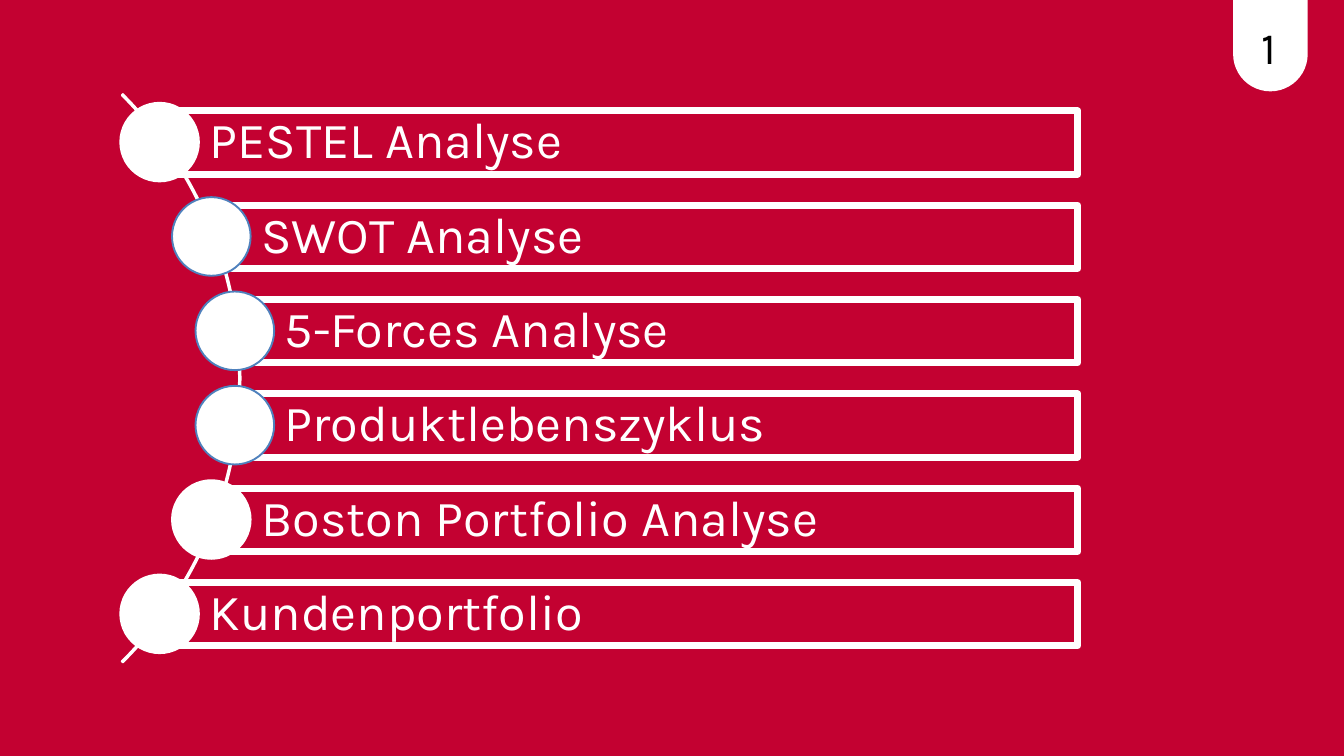
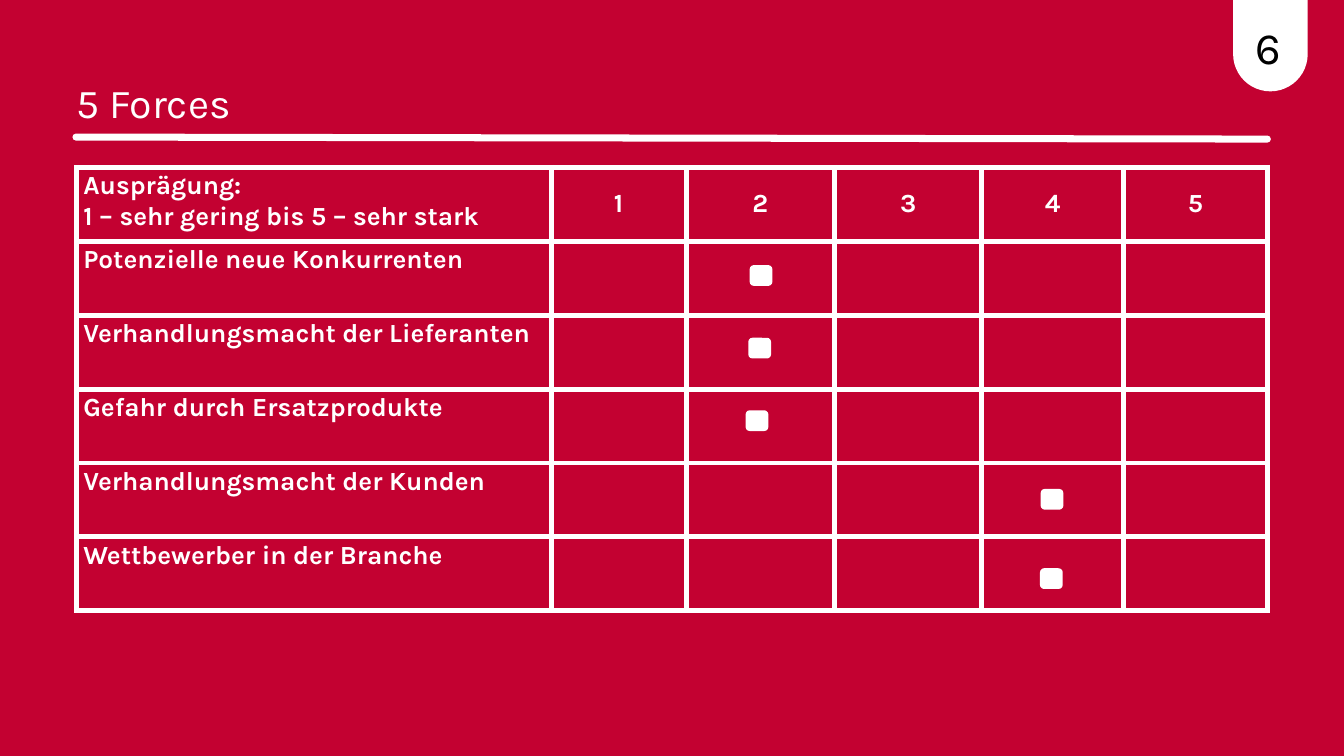
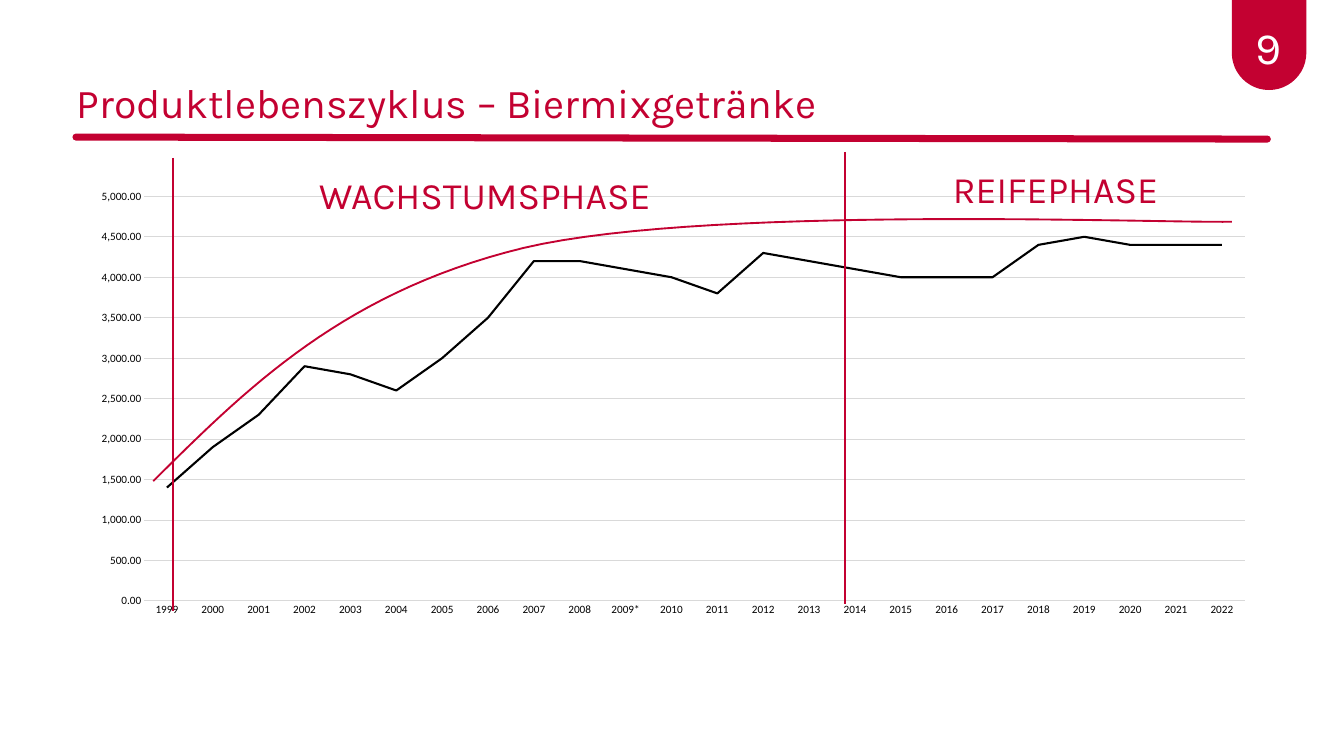
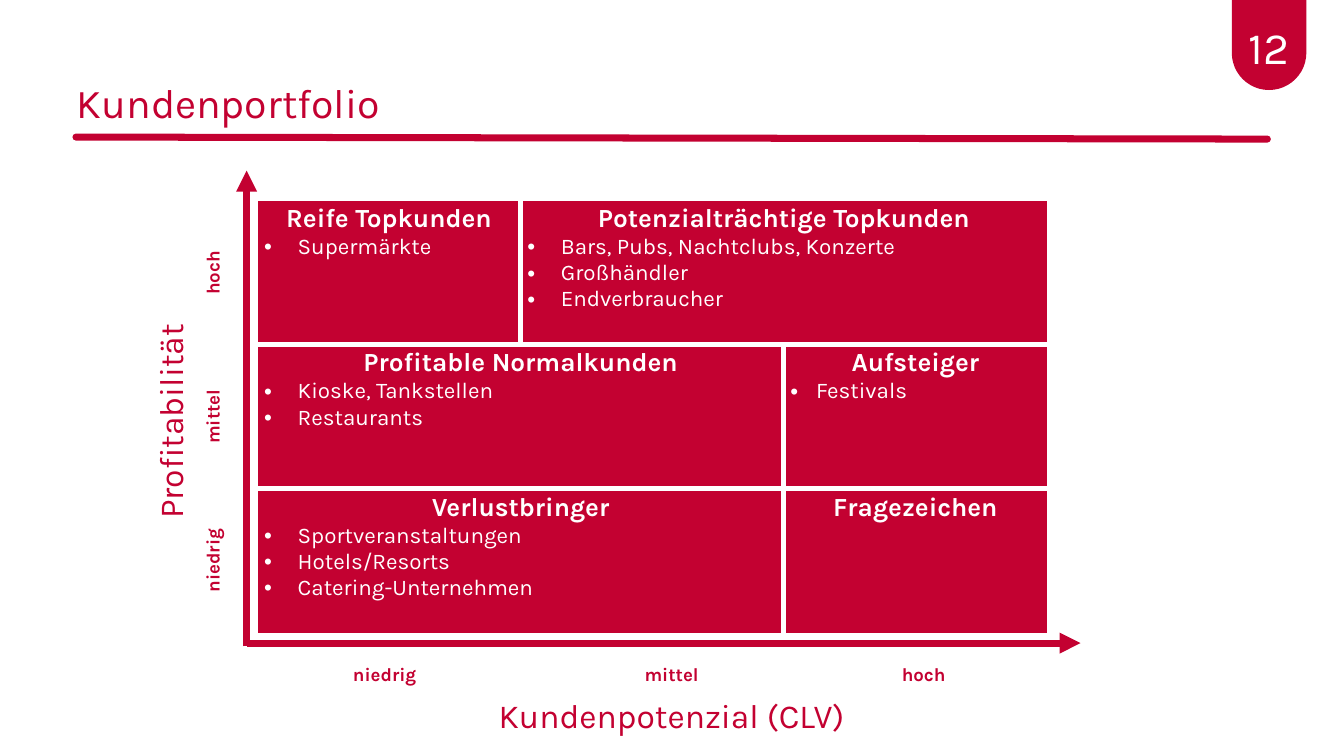
"""Build four slides on strategic analysis tools for a drinks producer."""
from lxml import etree
from pptx import Presentation
from pptx import util as u
from pptx.chart.data import CategoryChartData
from pptx.dml.color import RGBColor
from pptx.enum import chart as charts
from pptx.enum import shapes, text
from pptx.oxml import parse_xml
from pptx.oxml.ns import nsdecls, qn

RED = RGBColor(0xC3, 0x01, 0x31)
WHITE = RGBColor(0xFF, 0xFF, 0xFF)
BLACK = RGBColor(0, 0, 0)
BLUE = RGBColor(0x4F, 0x81, 0xBD)
GREY = RGBColor(0xD9, 0xD9, 0xD9)
FONT = "Karla"
COLUMNS, ROWS = 20, 11.25
CELL = u.Inches(1)
LEFT, CENTER = text.PP_ALIGN.LEFT, text.PP_ALIGN.CENTER
TITLE_SPACING = u.Pt(61.5)

TOOLS = ["PESTEL Analyse", "SWOT Analyse", "5-Forces Analyse",
         "Produktlebenszyklus", "Boston Portfolio Analyse", "Kundenportfolio"]
BAR_LEFTS = [2.38, 3.15, 3.5, 3.5, 3.15, 2.38]
DOT_LINES = [WHITE, BLUE, BLUE, BLUE, WHITE, WHITE]

FORCES = ["Potenzielle neue\u00a0Konkurrenten", "Verhandlungsmacht der Lieferanten",
          "Gefahr durch Ersatzprodukte", "Verhandlungsmacht der Kunden",
          "Wettbewerber in der\u00a0Branche"]
RATINGS = [(11.17, 3.96), (11.15, 5.04), (11.11, 6.12), (15.5, 7.29), (15.49, 8.47)]

YEARS = [f"{year}*" if year == 2009 else str(year) for year in range(1999, 2023)]
SALES = [1400, 1900, 2300, 2900, 2800, 2600, 3000, 3500, 4200, 4200, 4100, 4000,
         3800, 4300, 4200, 4100, 4000, 4000, 4000, 4400, 4500, 4400, 4400, 4400]
LIFE_CURVE = [[(2.28, 7.16), (3.7, 5.75), (5.12, 4.34), (7.79, 3.69)],
              [(7.79, 3.69), (10.47, 3.05), (17.18, 3.32), (18.33, 3.3)]]

SEGMENTS = [
    (0, 0, 0, "Reife Topkunden", ["Supermärkte"], 0.5),
    (0, 1, 2, "Potenzialträchtige Topkunden",
     ["Bars, Pubs, Nachtclubs, Konzerte", "Großhändler", "Endverbraucher"], 0.5),
    (1, 0, 1, "Profitable Normalkunden", ["Kioske, Tankstellen", "Restaurants"], 0.5),
    (1, 2, 2, "Aufsteiger", ["Festivals"], 0.38),
    (2, 0, 1, "Verlustbringer",
     ["Sportveranstaltungen", "Hotels/Resorts", "Catering-Unternehmen"], 0.5),
    (2, 2, 2, "Fragezeichen", [], 0.5),
]
LEVELS = [("niedrig", 4.81), ("mittel", 9.08), ("hoch", 12.83)]


def grid(*lengths):
    """Turn columns and rows of the slide grid into lengths."""
    return [round(length * CELL) for length in lengths]


def apply(target, values):
    """Set attributes of an object from a dict."""
    for name, value in values.items():
        setattr(target, name, value)


def write(paragraph, words, size, color, bold=False, align=LEFT, spacing=None):
    """Fill a paragraph with one formatted run."""
    apply(paragraph, {"alignment": align, "line_spacing": spacing})
    run = paragraph.add_run()
    run.text = words
    apply(run.font, {"name": FONT, "size": u.Pt(size), "bold": bold})
    run.font.color.rgb = color


def set_margins(frame, left=0, top=0, right=0, bottom=0):
    """Set the inner margins of a text frame."""
    apply(frame, dict(zip(("margin_left", "margin_top", "margin_right", "margin_bottom"),
                          grid(left, top, right, bottom))))


def add_text(slide, place, words, size, color, flush=False, vertical=False, **form):
    """Add a wrapped text box, optionally without margins or turned upwards."""
    frame = slide.shapes.add_textbox(*grid(*place)).text_frame
    frame.word_wrap = True
    if flush:
        set_margins(frame)
    if vertical:
        frame._txBody.bodyPr.set("vert", "vert270")
    write(frame.paragraphs[0], words, size, color, **form)


def paint(shape, fill=None, line=None, width=2):
    """Give a shape its fill and line and remove its shadow."""
    shape.shadow.inherit = False
    for target, color in ((shape.fill, fill), (shape.line.fill, line)):
        if color is None:
            target.background()
        else:
            target.solid()
            target.fore_color.rgb = color
    if line is not None:
        shape.line.width = u.Pt(width)


def add_shape(slide, kind, place, **colors):
    """Add a painted preset shape."""
    shape = slide.shapes.add_shape(kind, *grid(*place))
    paint(shape, **colors)
    return shape


def add_line(slide, ends, color, width=7.5, arrow=False, rounded=False):
    """Add a straight line, with an arrowhead or round ends if wanted."""
    line = slide.shapes.add_connector(shapes.MSO_CONNECTOR.STRAIGHT, *grid(*ends))
    line.line.color.rgb = color
    line.line.width = u.Pt(width)
    outline = line.line._get_or_add_ln()
    if rounded:
        outline.set("cap", "rnd")
    if arrow:
        etree.SubElement(outline, qn("a:tailEnd"), type="triangle")
    etree.SubElement(line._element.spPr, qn("a:effectLst"))


def add_curve(slide, segments, color, steps=30):
    """Draw joined cubic curves as one open outline."""
    points = []
    for segment in segments:
        for step in range(steps + 1):
            t = step / steps
            weights = ((1 - t) ** 3, 3 * t * (1 - t) ** 2, 3 * t * t * (1 - t), t ** 3)
            points.append(grid(*(sum(w * point[axis] for w, point in zip(weights, segment))
                                 for axis in (0, 1))))
    builder = slide.shapes.build_freeform(*points[0])
    builder.add_line_segments(points[1:], close=False)
    paint(builder.convert_to_shape(), line=color)


def add_slide(presentation, number, dark, title=None):
    """Add a slide with background, page tab and underlined title."""
    slide = presentation.slides.add_slide(presentation.slide_layouts[5 if title else 6])
    ground, ink = (RED, WHITE) if dark else (WHITE, RED)
    slide.background.fill.solid()
    slide.background.fill.fore_color.rgb = ground
    tab_place = (18.35, 0, 1.11, 1.36) if dark else (18.33, -0.02, 1.11, 1.36)
    tab = add_shape(slide, shapes.MSO_SHAPE.ROUND_2_SAME_RECTANGLE, tab_place, fill=ink)
    tab.adjustments[0], tab.adjustments[1] = 0, 0.5
    add_text(slide, (18.54, 0.16, 0.68, 0.86), str(number), 48, BLACK if dark else WHITE,
             flush=True, align=CENTER, spacing=u.Pt(67.2))
    if title:
        add_line(slide, (1.13, 2.04, 18.86, 2.07), ink, rounded=True)
        heading = slide.shapes.title
        apply(heading, dict(zip(("left", "top", "width", "height"),
                                grid(1.14, 1.03, 13.36, 0.78))))
        frame = heading.text_frame
        apply(frame, {"word_wrap": True, "auto_size": text.MSO_AUTO_SIZE.NONE,
                      "vertical_anchor": text.MSO_ANCHOR.TOP})
        set_margins(frame)
        write(frame.paragraphs[0], title, 43.9, ink, spacing=TITLE_SPACING)
    return slide


def add_table(slide, place, widths, row_count):
    """Add a plain table with given column widths and equal rows."""
    table = slide.shapes.add_table(row_count, len(widths), *grid(*place)).table
    apply(table, {"first_row": False, "horz_banding": False})
    for column, width in zip(table.columns, grid(*widths)):
        column.width = width
    return table


def finish_cell(cell, sides, fill=None):
    """Give a cell white borders on some sides and a fill."""
    properties = cell._tc.get_or_add_tcPr()
    for side in sides:
        properties.append(parse_xml(
            f'<a:ln{side} {nsdecls("a")} w="{u.Pt(6)}"><a:solidFill>'
            f'<a:srgbClr val="{WHITE}"/></a:solidFill></a:ln{side}>'))
    if fill is None:
        cell.fill.background()
    else:
        cell.fill.solid()
        cell.fill.fore_color.rgb = fill


def add_bullet(frame, words, indent):
    """Append a bulleted paragraph."""
    paragraph = frame.add_paragraph()
    properties = paragraph._p.get_or_add_pPr()
    distance = grid(indent)[0]
    properties.set("marL", str(distance))
    properties.set("indent", str(-distance))
    etree.SubElement(properties, qn("a:buFont"), typeface="Arial")
    etree.SubElement(properties, qn("a:buChar"), char="•")
    write(paragraph, words, 24, WHITE)


def build_overview(presentation):
    """List the analysis tools along an arc."""
    slide = add_slide(presentation, 1, dark=True)
    arc = add_shape(slide, shapes.MSO_SHAPE.BLOCK_ARC, (-8.38, -0.35, 11.96, 11.96), line=WHITE)
    for index, angle in enumerate((189, 27, 0.002)):
        arc.adjustments[index] = angle
    for row, (tool, left, dot_line) in enumerate(zip(TOOLS, BAR_LEFTS, DOT_LINES)):
        top = 1.65 + 1.404 * row
        bar = add_shape(slide, shapes.MSO_SHAPE.RECTANGLE, (left, top, 16.04 - left, 0.94),
                        line=WHITE, width=7.5)
        frame = bar.text_frame
        apply(frame, {"word_wrap": True, "vertical_anchor": text.MSO_ANCHOR.MIDDLE})
        set_margins(frame, 0.74, 0.15, 0.15, 0.15)
        write(frame.paragraphs[0], tool, 54, WHITE, spacing=0.9)
        add_shape(slide, shapes.MSO_SHAPE.OVAL, (left - 0.59, top - 0.12, 1.17, 1.17),
                  fill=WHITE, line=dot_line)


def build_forces(presentation):
    """Rate the five forces in a table."""
    slide = add_slide(presentation, 6, dark=True, title="5 Forces")
    table = add_table(slide, (1.14, 2.49, 17.72, 6.6), [7.06, 2.01, 2.21, 2.19, 2.11, 2.14], 6)
    for cell in table.iter_cells():
        finish_cell(cell, "LRTB")
    corner = table.cell(0, 0).text_frame
    write(corner.paragraphs[0], "Ausprägung:", 28, WHITE, bold=True)
    write(corner.add_paragraph(), "1 – sehr gering bis 5 – sehr stark", 28, WHITE, bold=True)
    for position in range(1, 6):
        score = table.cell(0, position)
        score.vertical_anchor = text.MSO_ANCHOR.MIDDLE
        write(score.text_frame.paragraphs[0], str(position), 28, WHITE, bold=True, align=CENTER)
        force = table.cell(position, 0)
        write(force.text_frame.paragraphs[0], FORCES[position - 1], 28, WHITE, bold=True)
    for left, top in RATINGS:
        add_shape(slide, shapes.MSO_SHAPE.ROUNDED_RECTANGLE, (left, top, 0.31, 0.28),
                  fill=WHITE, line=WHITE)


def add_sales_chart(slide):
    """Add the line chart of yearly sales."""
    data = CategoryChartData(number_format="#,##0.00")
    data.categories = YEARS
    data.add_series("Series 1", SALES)
    chart = slide.shapes.add_chart(charts.XL_CHART_TYPE.LINE,
                                   *grid(1.15, 2.69, 17.73, 6.63), data).chart
    apply(chart, {"has_legend": False, "has_title": False})
    apply(chart.font, {"name": "Calibri", "size": u.Pt(12)})
    chart.font.color.rgb = BLACK
    for axis in (chart.category_axis, chart.value_axis):
        apply(axis, {"major_tick_mark": charts.XL_TICK_MARK.NONE,
                     "minor_tick_mark": charts.XL_TICK_MARK.NONE})
    apply(chart.value_axis, {"minimum_scale": 0, "maximum_scale": 5000, "major_unit": 500,
                             "has_major_gridlines": True})
    apply(chart.value_axis.tick_labels, {"number_format": "#,##0.00",
                                         "number_format_is_linked": False})
    chart.value_axis.format.line.fill.background()
    for part in (chart.category_axis, chart.value_axis.major_gridlines):
        part.format.line.color.rgb = GREY
        part.format.line.width = u.Pt(0.75)
    plot = chart.plots[0]
    plot.vary_by_categories = False
    series = plot.series[0]
    series.smooth = False
    series.marker.style = charts.XL_MARKER_STYLE.NONE
    series.format.line.color.rgb = BLACK
    series.format.line.width = u.Pt(2.25)
    area = chart._chartSpace.chart.plotArea
    for old in area.findall(qn("c:layout")):
        area.remove(old)
    shares = "".join(f'<c:{name} val="{value}"/>' for name, value in (
        ("layoutTarget", "inner"), ("xMode", "edge"), ("yMode", "edge"),
        ("x", 0.056), ("y", 0.035), ("w", 0.924), ("h", 0.908)))
    area.insert(0, parse_xml(f'<c:layout {nsdecls("c")}><c:manualLayout>{shares}'
                             '</c:manualLayout></c:layout>'))


def build_life_cycle(presentation):
    """Show sales with the phases of the product life cycle."""
    slide = add_slide(presentation, 9, dark=False, title="Produktlebenszyklus – Biermixgetränke")
    add_sales_chart(slide)
    for ends in ((2.58, 2.35, 2.58, 9.09), (12.58, 2.26, 12.58, 8.99)):
        add_line(slide, ends, RED, width=2)
    for phase, left, top in (("WACHSTUMSPHASE", 4.65, 2.51), ("REIFEPHASE", 14.08, 2.43)):
        add_text(slide, (left, top, 5.9, 0.77), phase, 40, RED)
    add_curve(slide, LIFE_CURVE, RED)


def build_customers(presentation):
    """Place customer groups by potential and profitability."""
    slide = add_slide(presentation, 12, dark=False, title="Kundenportfolio")
    for ends in ((3.67, 9.62, 3.67, 2.54), (3.67, 9.57, 16.08, 9.57)):
        add_line(slide, ends, RED, arrow=True)
    table = add_table(slide, (3.83, 2.98, 11.75, 6.44), [11.75 / 3] * 3, 3)
    for row, first, last, heading, customers, indent in SEGMENTS:
        if last > first:
            table.cell(row, first).merge(table.cell(row, last))
        for column in range(first, last + 1):
            inner = {"L": column == first > 0, "R": column == last < 2,
                     "T": row > 0, "B": row < 2}
            finish_cell(table.cell(row, column), [side for side in inner if inner[side]], RED)
        frame = table.cell(row, first).text_frame
        write(frame.paragraphs[0], heading, 28, WHITE, bold=True, align=CENTER)
        for customer in customers:
            add_bullet(frame, customer, indent)
    for step, (level, left) in enumerate(LEVELS):
        add_text(slide, (left, 9.81, 1.83, 0.44), level, 20, RED, bold=True, align=CENTER)
        add_text(slide, (2.94, 7.51 - 2.14 * step, 0.54, 1.66), level, 20, RED,
                 vertical=True, bold=True, align=CENTER)
    for name, place, vertical in (("Kundenpotenzial (CLV)", (5.41, 10.08, 9.17, 0.78), False),
                                  ("Profitabilität", (1.97, 4.01, 0.76, 4.52), True)):
        add_text(slide, place, name, 36, RED, flush=True, vertical=vertical,
                 align=CENTER, spacing=TITLE_SPACING)


def main():
    """Build and save the presentation."""
    presentation = Presentation()
    apply(presentation, dict(zip(("slide_width", "slide_height"), grid(COLUMNS, ROWS))))
    for build in (build_overview, build_forces, build_life_cycle, build_customers):
        build(presentation)
    presentation.save("out.pptx")


if __name__ == "__main__":
    main()
